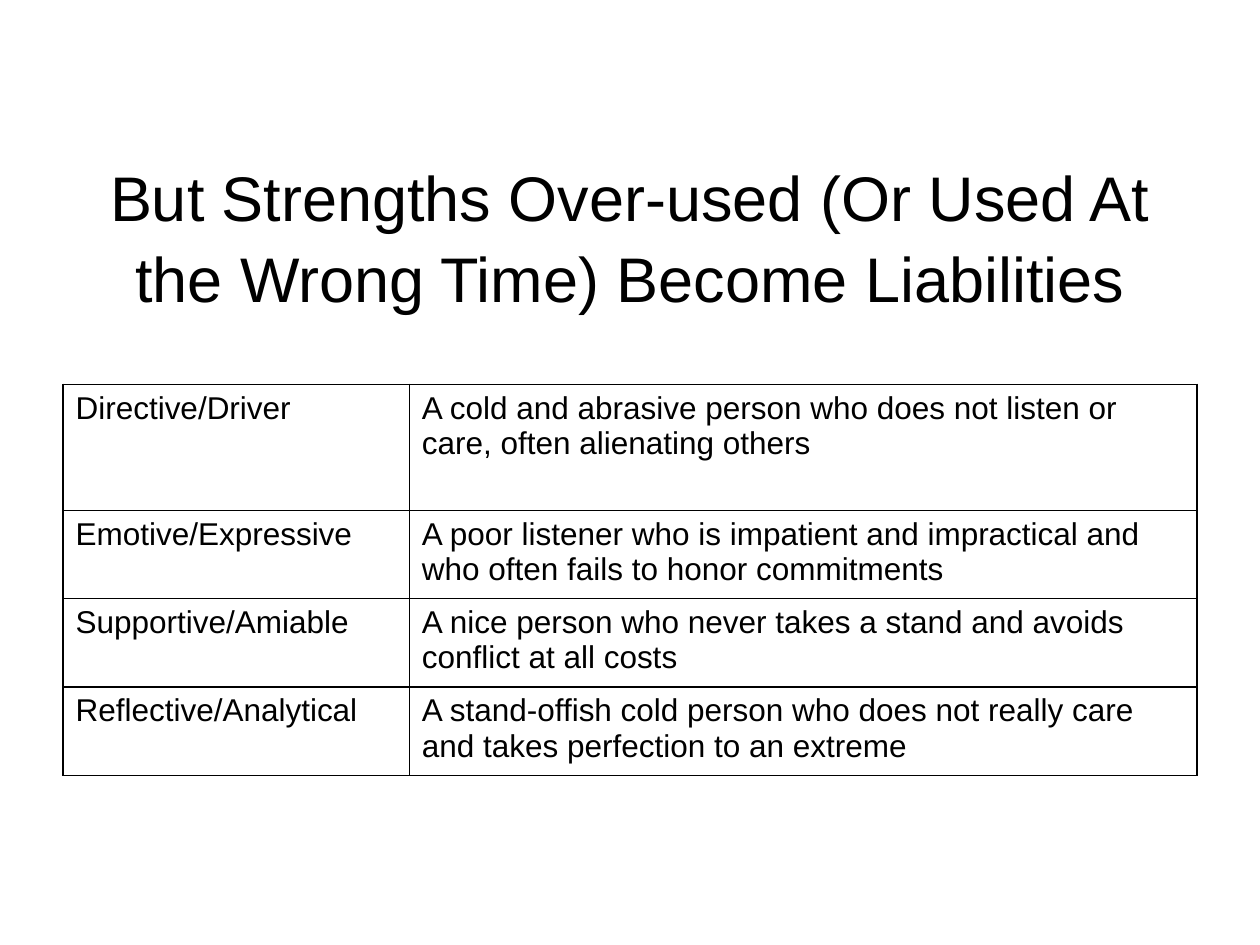
from lxml import etree
from pptx import Presentation
from pptx import util as u
from pptx.dml.color import RGBColor
from pptx.enum import text
from pptx.oxml.ns import qn

TITLE = "But Strengths Over-used (Or Used At the Wrong Time) Become Liabilities"
LIABILITIES = [
    ("Directive/Driver", "A cold and abrasive person who does not listen or care, often alienating others"),
    ("Emotive/Expressive", "A poor listener who is impatient and impractical and who often fails to honor commitments"),
    ("Supportive/Amiable", "A nice person who never takes a stand and avoids conflict at all costs"),
    ("Reflective/Analytical", "A stand-offish cold person who does not really care and takes perfection to an extreme"),
]
COLORS = {"ink": "000000", "paper": "FFFFFF"}
FONT = "Arial"
LEFT, WIDTH = 1.27, 22.86
TITLE_TOP, TITLE_HEIGHT = 2.97, 2.74
TABLE_TOP = 7.75
COLUMN_WIDTHS = [6.98, 15.88]
ROW_HEIGHTS = [2.54] + [1.78] * 3


def write(frame, content, size, align=text.PP_ALIGN.LEFT, spacing=1.0):
    """Put formatted text into a text frame."""
    frame.text = content
    frame.word_wrap = True
    paragraph = frame.paragraphs[0]
    paragraph.alignment = align
    paragraph.line_spacing = spacing
    font = paragraph.runs[0].font
    font.name = FONT
    font.size = u.Pt(size)
    font.color.rgb = RGBColor.from_string(COLORS["ink"])


def add_borders(cell, width=1):
    """Draw a solid line on each side of a cell."""
    properties = cell._tc.get_or_add_tcPr()
    for index, side in enumerate(("a:lnL", "a:lnR", "a:lnT", "a:lnB")):
        line = etree.Element(qn(side), w=str(u.Pt(width)))
        fill = etree.SubElement(line, qn("a:solidFill"))
        etree.SubElement(fill, qn("a:srgbClr"), val=COLORS["ink"])
        properties.insert(index, line)


def add_title(slide):
    """Place and format the title placeholder."""
    title = slide.shapes.title
    title.left, title.top = u.Cm(LEFT), u.Cm(TITLE_TOP)
    title.width, title.height = u.Cm(WIDTH), u.Cm(TITLE_HEIGHT)
    frame = title.text_frame
    frame.auto_size = text.MSO_AUTO_SIZE.NONE
    frame.vertical_anchor = text.MSO_ANCHOR.TOP
    write(frame, TITLE, size=36, align=text.PP_ALIGN.CENTER, spacing=1.07)


def add_liabilities(slide):
    """Add the table of styles and their liabilities."""
    table = slide.shapes.add_table(
        len(LIABILITIES), len(COLUMN_WIDTHS), u.Cm(LEFT), u.Cm(TABLE_TOP),
        u.Cm(WIDTH), u.Cm(sum(ROW_HEIGHTS))).table
    table.first_row = table.horz_banding = False
    for column, width in zip(table.columns, COLUMN_WIDTHS):
        column.width = u.Cm(width)
    for row, height, contents in zip(table.rows, ROW_HEIGHTS, LIABILITIES):
        row.height = u.Cm(height)
        for cell, content in zip(row.cells, contents):
            write(cell.text_frame, content, size=18)
            cell.fill.solid()
            cell.fill.fore_color.rgb = RGBColor.from_string(COLORS["paper"])
            add_borders(cell)


def main():
    """Build and save the slide."""
    presentation = Presentation()
    presentation.slide_width, presentation.slide_height = u.Cm(25.4), u.Cm(19.05)
    slide = presentation.slides.add_slide(presentation.slide_layouts[5])
    add_title(slide)
    add_liabilities(slide)
    presentation.save("out.pptx")


if __name__ == "__main__":
    main()
